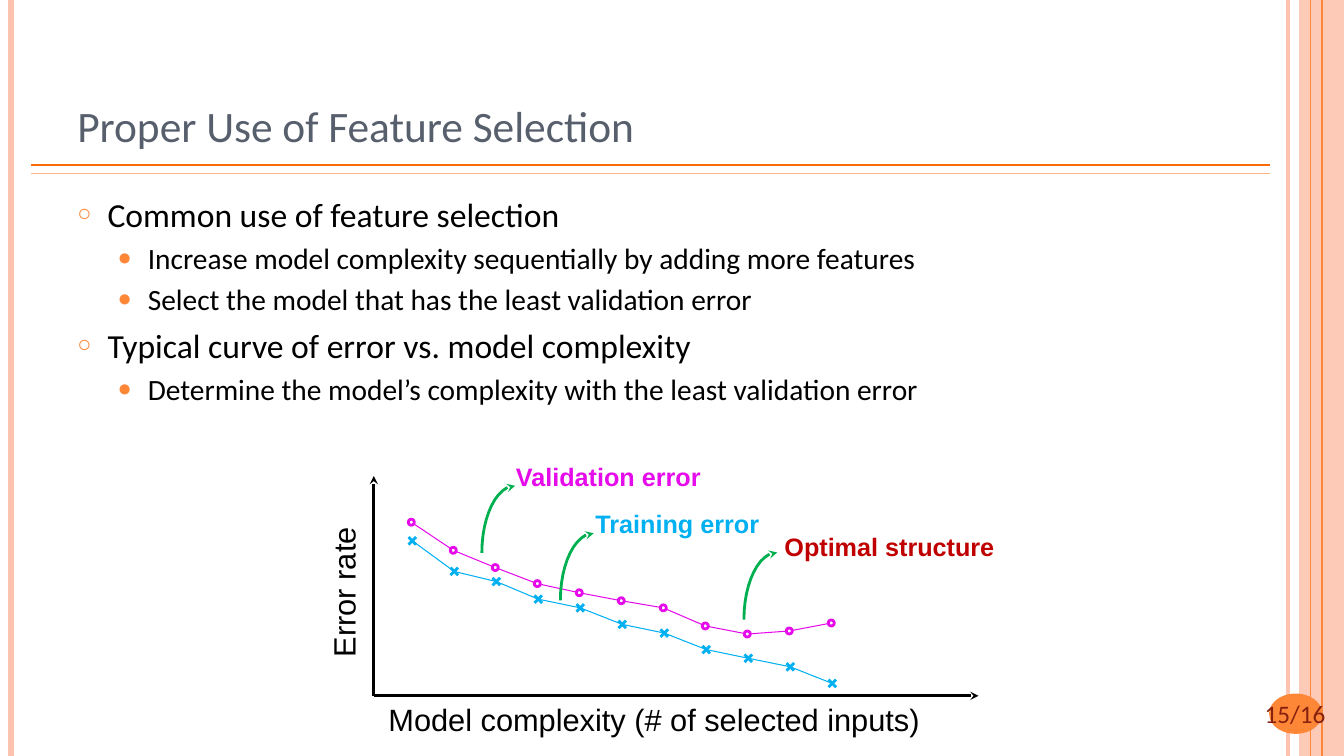
from itertools import pairwise
from math import cos, hypot, pi, sin

from lxml.etree import SubElement
from pptx import Presentation
from pptx.dml.color import RGBColor
from pptx.enum.shapes import MSO_CONNECTOR, MSO_SHAPE
from pptx.enum.text import MSO_ANCHOR, MSO_AUTO_SIZE, PP_ALIGN
from pptx.oxml.ns import qn
from pptx.util import Pt

BLACK = RGBColor(0x00, 0x00, 0x00)
SLATE = RGBColor(0x57, 0x5F, 0x6D)
PEACH = RGBColor(0xFE, 0xC3, 0xAE)
ORANGE = RGBColor(0xFE, 0x86, 0x37)
DEEP_ORANGE = RGBColor(0xFF, 0x6B, 0x0A)
LIGHT_ORANGE = RGBColor(0xFE, 0xB6, 0x87)
BROWN = RGBColor(0x86, 0x21, 0x10)
MAGENTA = RGBColor(0xE6, 0x0B, 0xEB)
BLUE = RGBColor(0x00, 0xB0, 0xF0)
GREEN = RGBColor(0x00, 0xB0, 0x50)
RED = RGBColor(0xC0, 0x00, 0x00)

SLIDE_WIDTH, SLIDE_HEIGHT = 960, 540

BULLETS = [
    (0, "Common use of feature selection"),
    (1, "Increase model complexity sequentially by adding more features"),
    (1, "Select the model that has the least validation error"),
    (0, "Typical curve of error vs. model complexity"),
    (1, "Determine the model’s complexity with the least validation error"),
]
# level: size, space before, left margin, symbol, symbol size in percent
BULLET_STYLES = [(24, 6, 21.6, "○", 70), (21, 4.2, 50.4, "●", 80)]

# Curve heights, measured down from the top of the chart
POINT_STEP = 30
VALIDATION = [33, 53.1, 65.4, 76.9, 83.4, 89.1, 94.2, 107.1, 112.9, 110.7, 105]
TRAINING = [46.3, 68.2, 75.4, 88, 94.2, 106, 112.2, 124, 130.2, 136.3, 148.2]

# text, colour, label left, top, width, arrow left, top
CALLOUTS = [
    ("Validation error", MAGENTA, 93.7, -7.4, 147.6, 77.2, 7),
    ("Training error", BLUE, 150.6, 26.5, 132.5, 133.3, 40.9),
    ("Optimal structure", RED, 285.2, 43, 166.3, 264.4, 54.6),
]


def set_alpha(fill_format_element, percent):
    colour = next(fill_format_element.iter(qn("a:srgbClr")))
    SubElement(colour, qn("a:alpha")).set("val", str(percent * 1000))


def add_arrowhead(shape):
    SubElement(shape.line._get_or_add_ln(), qn("a:tailEnd")).set("type", "stealth")


def add_line(slide, start, end, colour, width):
    line = slide.shapes.add_connector(
        MSO_CONNECTOR.STRAIGHT, *(Pt(value) for value in (*start, *end)))
    line.line.color.rgb = colour
    line.line.width = Pt(width)
    SubElement(line._element.spPr, qn("a:effectLst"))
    return line


def add_plain_shape(slide, kind, left, top, width, height, fill=None):
    shape = slide.shapes.add_shape(kind, Pt(left), Pt(top), Pt(width), Pt(height))
    shape.shadow.inherit = False
    shape.line.fill.background()
    if fill is None:
        shape.fill.background()
    else:
        shape.fill.solid()
        shape.fill.fore_color.rgb = fill
    return shape


def style_run(paragraph, size, font, colour, bold=False):
    for run in paragraph.runs:
        run.font.size = Pt(size)
        run.font.name = font
        run.font.color.rgb = colour
        run.font.bold = bold


def add_label(slide, box, text, size, font, colour, bold=False, spacing=0.65):
    label = slide.shapes.add_textbox(*(Pt(value) for value in box))
    label.text_frame.word_wrap = False
    label.text_frame.text = text
    paragraph = label.text_frame.paragraphs[0]
    paragraph.alignment = PP_ALIGN.CENTER
    paragraph.line_spacing = spacing
    style_run(paragraph, size, font, colour, bold)
    return label


def add_frame(slide, width, height):
    # Vertical stripes at both edges
    band = add_plain_shape(slide, MSO_SHAPE.RECTANGLE, width - 32, 0, 32, height, PEACH)
    set_alpha(band._element.spPr, 87)
    stripes = [(8, PEACH, 4.5), (width - 40, PEACH, 3),
               (width - 24, ORANGE, 0.75), (width - 16, ORANGE, 1.5)]
    for x, colour, weight in stripes:
        add_line(slide, (x, 0), (x, height), colour, weight)
    # Double rule under the title
    for y, colour in [(118, DEEP_ORANGE), (123.8, LIGHT_ORANGE)]:
        add_line(slide, (22.5, y), (width - 53, y), colour, 1)
    # Page number
    add_plain_shape(slide, MSO_SHAPE.OVAL, width - 53.5, height - 44.6, 38, 28.8, ORANGE)
    add_label(slide, (width - 78.5, height - 44.6, 87, 28.8), "15/16", 18,
              "Calibri", BROWN, spacing=1)


def place(placeholder, left, top, width, height):
    placeholder.left, placeholder.top = Pt(left), Pt(top)
    placeholder.width, placeholder.height = Pt(width), Pt(height)
    placeholder.text_frame.auto_size = MSO_AUTO_SIZE.NONE
    return placeholder.text_frame


def fill_title(slide, left, top, width, height):
    text_frame = place(slide.shapes.title, left, top, width, height)
    text_frame.vertical_anchor = MSO_ANCHOR.BOTTOM
    text_frame.text = "Proper Use of Feature Selection"
    text_frame.paragraphs[0].alignment = PP_ALIGN.LEFT
    style_run(text_frame.paragraphs[0], 31, "Calibri", SLATE)


def add_bullet(paragraph, margin, symbol, percent):
    properties = paragraph._p.get_or_add_pPr()
    properties.set("marL", str(Pt(margin)))
    properties.set("indent", str(-Pt(21.6)))
    colour = SubElement(properties, qn("a:buClr"))
    SubElement(colour, qn("a:srgbClr")).set("val", str(ORANGE))
    SubElement(properties, qn("a:buSzPct")).set("val", str(percent * 1000))
    SubElement(properties, qn("a:buChar")).set("char", symbol)


def fill_body(slide, left, top, width, height):
    text_frame = place(slide.placeholders[1], left, top, width, height)
    text_frame.text = "\n".join(text for _, text in BULLETS)
    for index, (paragraph, (level, _)) in enumerate(zip(text_frame.paragraphs, BULLETS)):
        size, space, margin, symbol, percent = BULLET_STYLES[level]
        paragraph.level = level
        add_bullet(paragraph, margin, symbol, percent)
        paragraph.space_before = Pt(space if index else 0)
        style_run(paragraph, size, "Calibri", BLACK)


def add_circle_marker(slide, x, y):
    circle = add_plain_shape(slide, MSO_SHAPE.OVAL, x - 2.15, y - 2.15, 4.3, 4.3)
    circle.line.color.rgb = MAGENTA
    circle.line.width = Pt(2)


def add_cross_marker(slide, x, y):
    for rise in (-2.7, 2.7):
        add_line(slide, (x - 2.7, y - rise), (x + 2.7, y + rise), BLUE, 2)


def add_curve(slide, left, top, heights, colour, add_marker, gap):
    points = [(left + POINT_STEP * i, top + y) for i, y in enumerate(heights)]
    for (x1, y1), (x2, y2) in pairwise(points):
        share = gap / hypot(x2 - x1, y2 - y1)
        dx, dy = (x2 - x1) * share, (y2 - y1) * share
        add_line(slide, (x1 + dx, y1 + dy), (x2 - dx, y2 - dy), colour, 0.75)
    for x, y in points:
        add_marker(slide, x, y)


def add_curved_arrow(slide, left, top, width, height):
    angles = [pi / 2 * step / 12 for step in range(13)]
    points = [(Pt(left + width * (1 - cos(angle))), Pt(top + height * (1 - sin(angle))))
              for angle in angles]
    builder = slide.shapes.build_freeform(*points[0])
    builder.add_line_segments(points[1:], close=False)
    arrow = builder.convert_to_shape()
    arrow.shadow.inherit = False
    arrow.fill.background()
    arrow.line.color.rgb = GREEN
    arrow.line.width = Pt(2)
    add_arrowhead(arrow)


def add_error_chart(slide, left, top, width, height):
    # Axes and their titles
    origin = (left, top + height)
    for end in [(left, top), (left + width, top + height)]:
        add_arrowhead(add_line(slide, origin, end, BLACK, 2))
    add_label(slide, (left + 0.8, top + height + 8.5, 399, 25.2),
              "Model complexity (# of selected inputs)", 22, "Arial", BLACK)
    error_label = add_label(slide, (left - 72, top + 70.4, 108.7, 25.2),
                            "Error rate", 22, "Arial", BLACK)
    error_label.rotation = 270
    # Curves
    add_curve(slide, left + 26.8, top, VALIDATION, MAGENTA, add_circle_marker, 2.2)
    add_curve(slide, left + 27.5, top, TRAINING, BLUE, add_cross_marker, 0)
    # Callouts
    for text, colour, label_x, label_y, label_width, arrow_x, arrow_y in CALLOUTS:
        add_curved_arrow(slide, left + arrow_x, top + arrow_y, 23.8, 48)
        add_label(slide, (left + label_x, top + label_y, label_width, 22.3),
                  text, 18, "Arial", colour, bold=True)


def main():
    presentation = Presentation()
    presentation.slide_width, presentation.slide_height = Pt(SLIDE_WIDTH), Pt(SLIDE_HEIGHT)
    slide = presentation.slides.add_slide(presentation.slide_layouts[1])
    add_frame(slide, SLIDE_WIDTH, SLIDE_HEIGHT)
    fill_title(slide, 48, 21.6, 784, 90)
    fill_body(slide, 48, 134.6, 784, 375)
    add_error_chart(slide, 267, 340, 432, 157)
    presentation.save("out.pptx")


if __name__ == "__main__":
    main()
